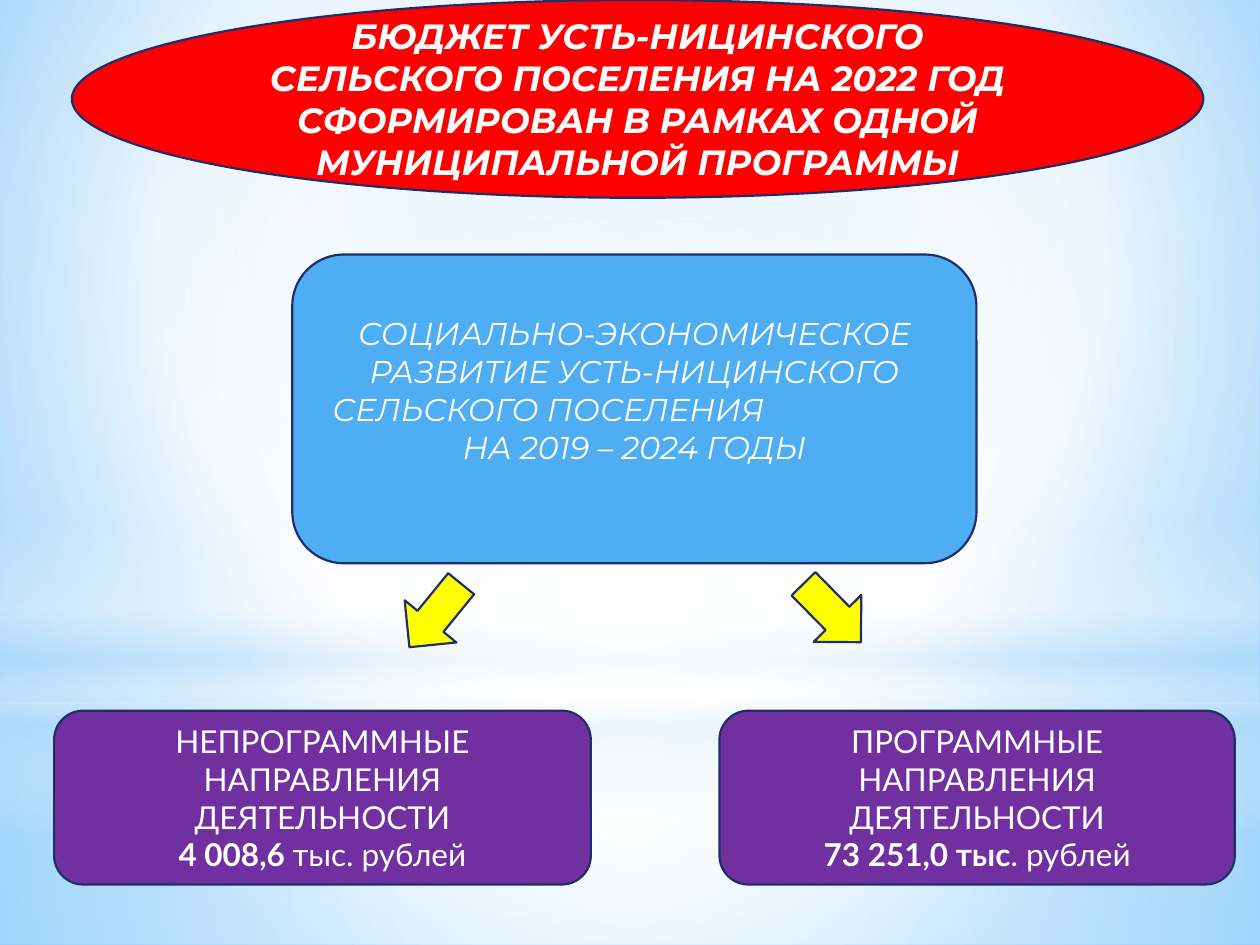
from pptx import Presentation
from pptx.dml.color import RGBColor
from pptx.enum.shapes import MSO_SHAPE
from pptx.enum.text import MSO_ANCHOR, PP_ALIGN
from pptx.oxml.ns import qn
from pptx.util import Inches, Pt
from lxml import etree

RECT, OVAL = MSO_SHAPE.RECTANGLE, MSO_SHAPE.OVAL
ROUND, ARROW = MSO_SHAPE.ROUNDED_RECTANGLE, MSO_SHAPE.DOWN_ARROW
MIDDLE, CENTER, LEFT = MSO_ANCHOR.MIDDLE, PP_ALIGN.CENTER, PP_ALIGN.LEFT

THEME = {
    "red": "FF0000", "blue": "4FADF3", "purple": "7030A0",
    "yellow": "FFFF00", "line": "1F2E69", "text": "FFFFFF",
    "white": "FFFFFF", "haze": "B4DCFA", "sky": "9ED5FF", "deep": "5BB9FF",
    "title": 20, "body": 18, "outline": 1.25,
    "display": "Montserrat", "plain": "Lato",
}

prs = Presentation()
prs.slide_width, prs.slide_height = Inches(10), Inches(7.5)
COL, ROW = prs.slide_width / 100, prs.slide_height / 75
s = prs.slides.add_slide(prs.slide_layouts[6])


def add_box(kind, x, y, w, h, color=None):
    sp = s.shapes.add_shape(kind, int(x * COL), int(y * ROW), int(w * COL), int(h * ROW))
    sp.shadow.inherit = False
    if color:
        sp.fill.solid()
        sp.fill.fore_color.rgb = RGBColor.from_string(THEME[color])
        sp.line.color.rgb = RGBColor.from_string(THEME["line"])
        sp.line.width = Pt(THEME["outline"])
    else:
        sp.line.fill.background()
    return sp


def set_gradient(fill, element, stops, focus):
    fill.gradient()
    grad = next(element.iter(qn("a:gradFill")))
    for child in list(grad):
        grad.remove(child)
    gs_list = etree.SubElement(grad, qn("a:gsLst"))
    for pos, color, alpha in stops:
        gs = etree.SubElement(gs_list, qn("a:gs"), pos=str(pos * 1000))
        clr = etree.SubElement(gs, qn("a:srgbClr"), val=THEME[color])
        etree.SubElement(clr, qn("a:alpha"), val=str(alpha * 1000))
    if focus:
        shade = etree.SubElement(grad, qn("a:path"), path="circle")
        sides = {k: str(v * 1000) for k, v in zip("ltrb", focus)}
        etree.SubElement(shade, qn("a:fillToRect"), **sides)
    else:
        etree.SubElement(grad, qn("a:lin"), ang="5400000", scaled="0")


set_gradient(s.background.fill, s.element,
             [(0, "sky", 100), (60, "white", 100), (100, "deep", 100)], (20, 10, 20, 60))

middle = (50, 50, 50, 50)
layers = [
    (RECT, 55.8, 19.2, [(0, "white", 91), (37, "white", 76), (100, "haze", 79)], middle),
    (RECT, 0, 55.8, [(0, "white", 89), (48, "white", 62), (100, "haze", 79)], middle),
    (RECT, 41.2, 25, [(0, "white", 0), (29, "white", 30), (45, "haze", 40),
                      (55, "white", 26), (65, "haze", 60), (100, "white", 0)], None),
    (OVAL, 17.5, 55.8, [(0, "white", 100), (56, "white", 0)], middle),
]
for kind, y, h, stops, focus in layers:
    sp = add_box(kind, 0, y, 100, h)
    set_gradient(sp.fill, sp._element, stops, focus)

activity = "НАПРАВЛЕНИЯ ДЕЯТЕЛЬНОСТИ"
cards = [
    (OVAL, 5.7, 0, 89.8, 15.7, "red", "display", "title", True, True, 0.5, [
        (CENTER, [("БЮДЖЕТ УСТЬ-НИЦИНСКОГО СЕЛЬСКОГО ПОСЕЛЕНИЯ НА 2022 ГОД "
                   "СФОРМИРОВАН В РАМКАХ ОДНОЙ МУНИЦИПАЛЬНОЙ ПРОГРАММЫ", None)])]),
    (ROUND, 23.2, 20.2, 54.3, 24.5, "blue", "display", "body", False, True, 3.5, [
        (CENTER, [("СОЦИАЛЬНО-ЭКОНОМИЧЕСКОЕ РАЗВИТИЕ УСТЬ-НИЦИНСКОГО", None)]),
        (LEFT, [("СЕЛЬСКОГО ПОСЕЛЕНИЯ", None)]),
        (CENTER, [("НА 2019 – 2024 ГОДЫ", None)])]),
    (ROUND, 4.3, 56.4, 42.6, 13.8, "purple", "plain", "body", False, False, 0.5, [
        (CENTER, [("НЕПРОГРАММНЫЕ " + activity, None)]),
        (CENTER, [("4 008,6 ", True), ("тыс. рублей", False)])]),
    (ROUND, 57.1, 56.4, 40.9, 13.8, "purple", "plain", "body", False, False, 0.5, [
        (CENTER, [("ПРОГРАММНЫЕ " + activity, None)]),
        (CENTER, [("73 251,0 тыс", True), (". рублей", False)])]),
]
for kind, x, y, w, h, color, face, size, bold, italic, bottom, paragraphs in cards:
    tf = add_box(kind, x, y, w, h, color).text_frame
    tf.word_wrap = True
    tf.vertical_anchor = MIDDLE
    tf.margin_bottom = int(bottom * ROW)
    for i, (align, runs) in enumerate(paragraphs):
        p = tf.add_paragraph() if i else tf.paragraphs[0]
        p.alignment = align
        if align == LEFT:
            p._p.get_or_add_pPr().set("marL", str(int(COL)))
        p.font.name, p.font.size = THEME[face], Pt(THEME[size])
        p.font.bold, p.font.italic = bold, italic
        p.font.color.rgb = RGBColor.from_string(THEME["text"])
        for text, strong in runs:
            r = p.add_run()
            r.text = text
            r.font.bold = strong

for x, y, angle in [(31.9, 45.6, 39.2), (63.4, 45.4, 315.5)]:
    add_box(ARROW, x, y, 5.3, 6.5, "yellow").rotation = angle

prs.save("out.pptx")
